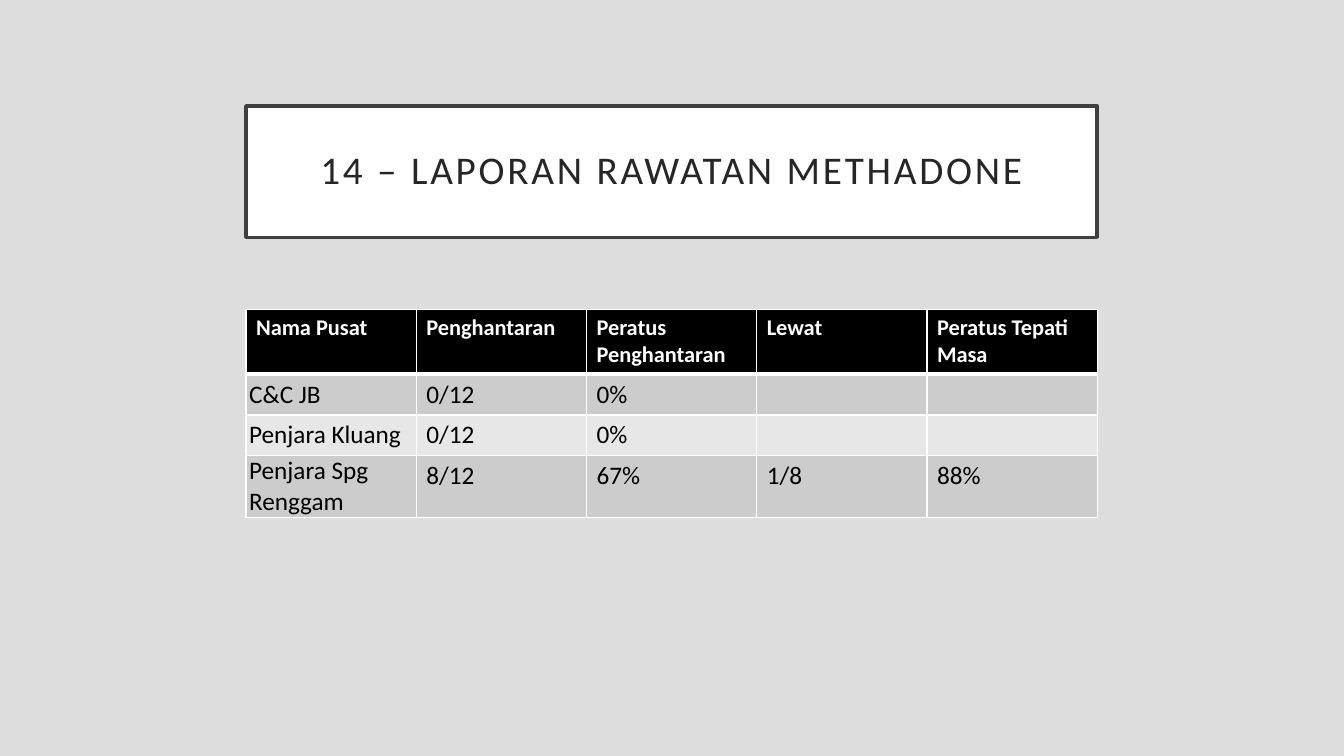
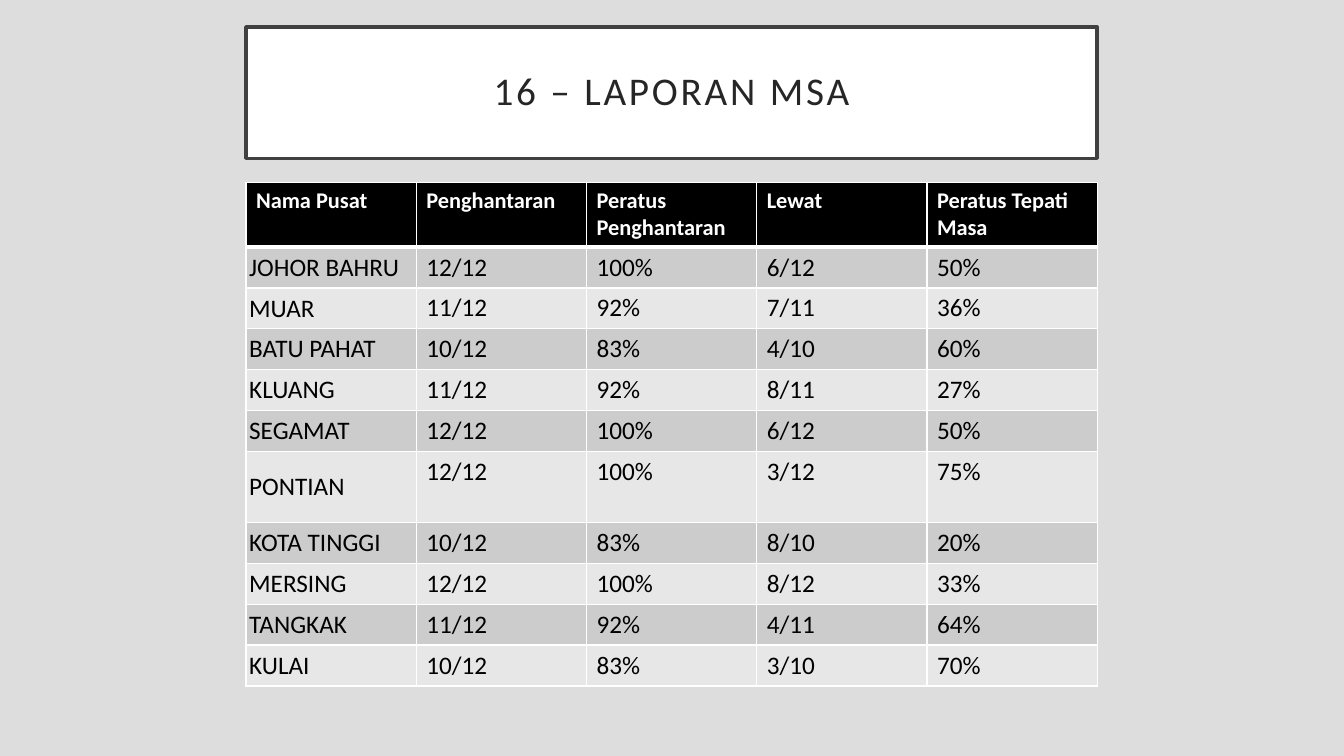
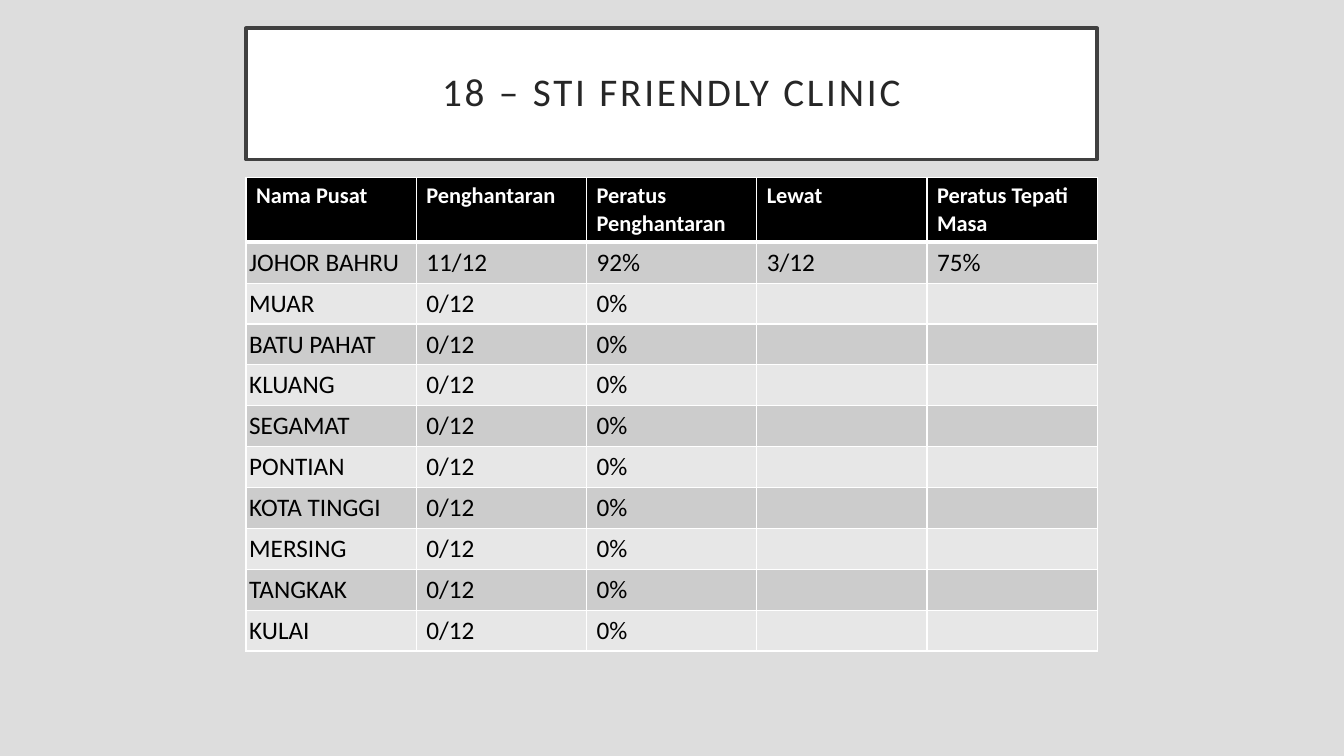
"""Build three slides of treatment and clinic reports, each a boxed title over a table."""
from lxml.etree import SubElement
from pptx import Presentation
from pptx.dml.color import RGBColor
from pptx.enum.text import MSO_ANCHOR, MSO_AUTO_SIZE, PP_ALIGN
from pptx.oxml.ns import qn
from pptx.util import Cm, Pt

BACK = RGBColor(0xDD, 0xDD, 0xDD)
WHITE = RGBColor(0xFF, 0xFF, 0xFF)
BLACK = RGBColor(0x00, 0x00, 0x00)
FRAME = RGBColor(0x40, 0x40, 0x40)
INK = RGBColor(0x26, 0x26, 0x26)
DARK = RGBColor(0xCC, 0xCC, 0xCC)
LIGHT = RGBColor(0xE7, 0xE7, 0xE7)
FONT = "Calibri"

LEFT, COL = 6.2, 4.29
BOX = 3.31
HEAD, ROW = 1.63, 1.03

HEADS = ("Nama Pusat", "Penghantaran", "Peratus Penghantaran", "Lewat", "Peratus Tepati Masa")
TOWNS = ("JOHOR BAHRU", "MUAR", "BATU PAHAT", "KLUANG", "SEGAMAT",
         "PONTIAN", "KOTA TINGGI", "MERSING", "TANGKAK", "KULAI")
NONE = ("0/12", "0%", "", "")

JAILS = [
    ("C&C JB", *NONE),
    ("Penjara Kluang", *NONE),
    ("Penjara Spg Renggam", "8/12", "67%", "1/8", "88%"),
]
MSA = [
    ("12/12", "100%", "6/12", "50%"),
    ("11/12", "92%", "7/11", "36%"),
    ("10/12", "83%", "4/10", "60%"),
    ("11/12", "92%", "8/11", "27%"),
    ("12/12", "100%", "6/12", "50%"),
    ("12/12", "100%", "3/12", "75%"),
    ("10/12", "83%", "8/10", "20%"),
    ("12/12", "100%", "8/12", "33%"),
    ("11/12", "92%", "4/11", "64%"),
    ("10/12", "83%", "3/10", "70%"),
]
STI = [("11/12", "92%", "3/12", "75%")] + [NONE] * 9

PAGES = [
    ("14 – LAPORAN RAWATAN METHADONE", 2.67, 7.79, JAILS, {3: 1.54}),
    ("16 – LAPORAN MSA", 0.68, 4.59,
     [(town, *vals) for town, vals in zip(TOWNS, MSA)], {6: 1.79}),
    ("18 – STI FRIENDLY CLINIC", 0.71, 4.47,
     [(town, *vals) for town, vals in zip(TOWNS, STI)], {}),
]


def add_text(para, text, size, color, bold=False):
    run = para.add_run()
    run.text = text
    run.font.name = FONT
    run.font.size = Pt(size)
    run.font.bold = bold
    run.font.color.rgb = color
    return run


def add_edges(cell, top, base):
    props = cell._tc.get_or_add_tcPr()
    for side, width in (("L", 1), ("R", 1), ("T", top), ("B", base)):
        edge = SubElement(props, qn("a:ln" + side), w=str(Pt(width)))
        fill = SubElement(edge, qn("a:solidFill"))
        SubElement(fill, qn("a:srgbClr"), val=str(WHITE))


deck = Presentation()
deck.slide_width, deck.slide_height = Cm(33.87), Cm(19.05)
back = deck.slide_master.background.fill
back.solid()
back.fore_color.rgb = BACK

for name, top, start, rows, tall in PAGES:
    slide = deck.slides.add_slide(deck.slide_layouts[5])

    title = slide.shapes.title
    title.left, title.top = Cm(LEFT), Cm(top)
    title.width, title.height = Cm(COL * 5), Cm(BOX)
    title.fill.solid()
    title.fill.fore_color.rgb = WHITE
    title.line.color.rgb = FRAME
    title.line.width = Pt(2.5)
    frame = title.text_frame
    frame.word_wrap = True
    frame.auto_size = MSO_AUTO_SIZE.NONE
    frame.vertical_anchor = MSO_ANCHOR.MIDDLE
    frame.margin_left = frame.margin_right = Cm(0.51)
    frame.margin_top = frame.margin_bottom = Cm(0.51)
    para = frame.paragraphs[0]
    para.alignment = PP_ALIGN.CENTER
    para.line_spacing = 0.9
    run = add_text(para, name, 28, INK)
    run.font._element.set("spc", "200")

    highs = [HEAD] + [tall.get(r, ROW) for r in range(1, len(rows) + 1)]
    table = slide.shapes.add_table(len(highs), 5, Cm(LEFT), Cm(start),
                                   Cm(COL * 5), Cm(sum(highs))).table
    for col in table.columns:
        col.width = Cm(COL)
    for r, (high, vals) in enumerate(zip(highs, [HEADS] + rows)):
        table.rows[r].height = Cm(high)
        for c, text in enumerate(vals):
            cell = table.cell(r, c)
            add_edges(cell, 3 if r == 1 else 1, 3 if r == 0 else 1)
            cell.fill.solid()
            cell.fill.fore_color.rgb = BLACK if r == 0 else DARK if r % 2 else LIGHT
            if r and c == 0:
                cell.vertical_anchor = MSO_ANCHOR.MIDDLE
                cell.margin_left = cell.margin_right = Cm(0.08)
                cell.margin_top = cell.margin_bottom = 0
            if text:
                size, color = (18, BLACK) if r else (16, WHITE)
                add_text(cell.text_frame.paragraphs[0], text, size, color, r == 0)

deck.save("out.pptx")
